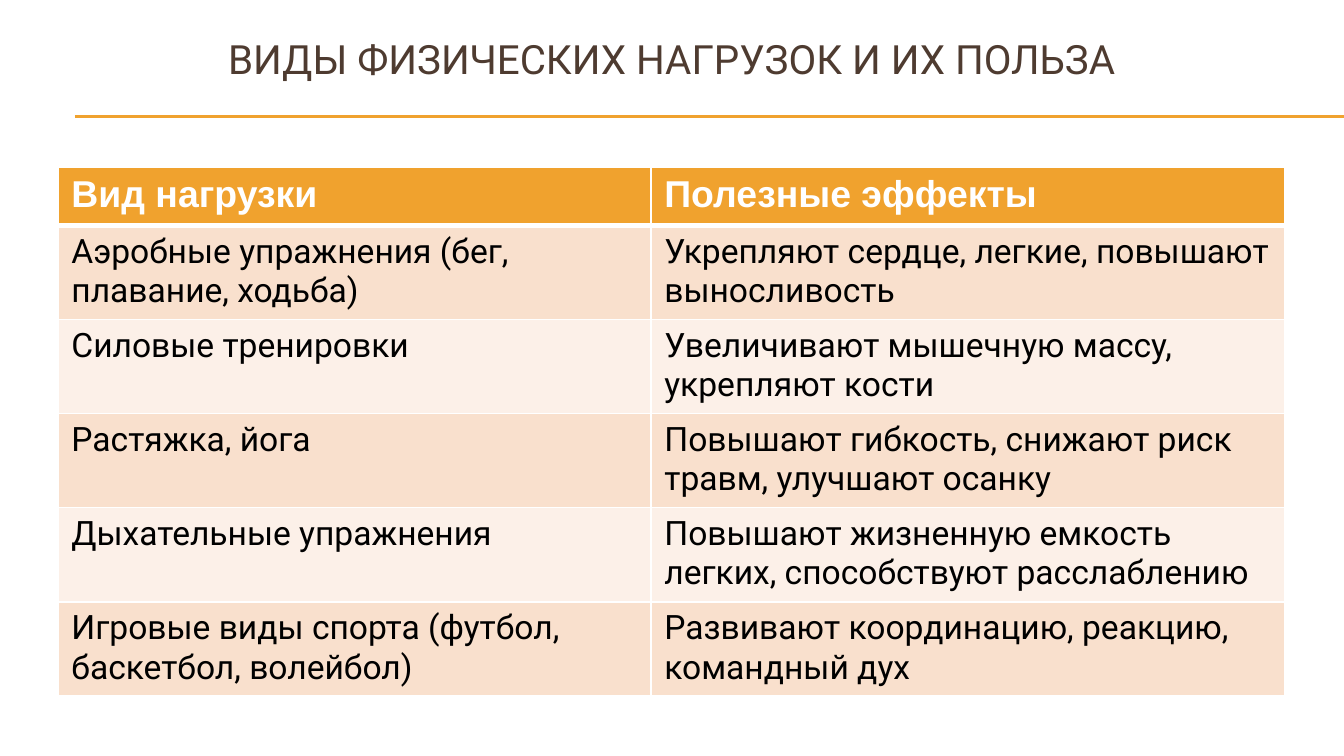
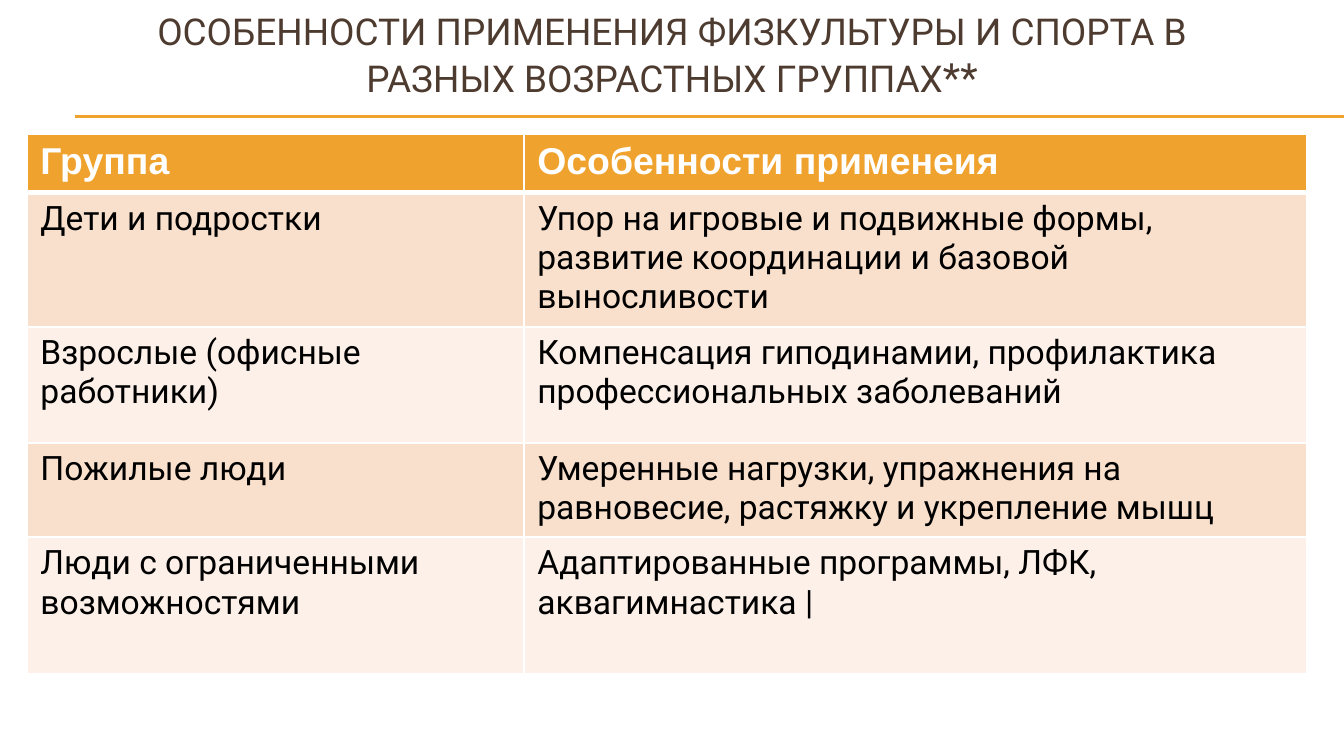
from lxml import etree
from pptx import Presentation
from pptx.dml.color import RGBColor
from pptx.enum.shapes import MSO_CONNECTOR
from pptx.enum.text import MSO_ANCHOR, PP_ALIGN
from pptx.oxml import parse_xml
from pptx.oxml.ns import nsdecls, qn
from pptx.util import Pt

# Shared style
PX = 914400 / 134.4
W, H = 1344, 756
COLORS = {
    "accent": "F0A22E",
    "title": "4E3B30",
    "text": "000000",
    "white": "FFFFFF",
    "band_dark": "F9E0CD",
    "band_light": "FCF0E8",
}
BODY_FONT, HEAD_FONT = "Roboto", "Arial"
RULE_LEFT, RULE_YS = 75, (116, 117)
TITLE_LEFT, TITLE_WIDTH = 67, 1210

# Slide content: title runs are (text, size); lengths are px
SLIDES = [
    {
        "title": [("ВИДЫ ФИЗИЧЕСКИХ НАГРУЗОК И ИХ ПОЛЬЗА", 21.6)],
        "title_top": 31, "title_height": 54,
        "left": 58, "top": 167,
        "cols": [593, 634],
        "heights": [55] + [92] * 5,
        "rows": [
            ("Вид нагрузки", "Полезные эффекты"),
            ("Аэробные упражнения (бег, плавание, ходьба)",
             "Укрепляют сердце, легкие, повышают выносливость"),
            ("Силовые тренировки", "Увеличивают мышечную массу, укрепляют кости"),
            ("Растяжка, йога", "Повышают гибкость, снижают риск травм, улучшают осанку"),
            ("Дыхательные упражнения",
             "Повышают жизненную емкость легких, способствуют расслаблению"),
            ("Игровые виды спорта (футбол, баскетбол, волейбол)",
             "Развивают координацию, реакцию, командный дух"),
        ],
    },
    {
        "title": [("ОСОБЕННОСТИ ПРИМЕНЕНИЯ ФИЗКУЛЬТУРЫ И СПОРТА В "
                   "РАЗНЫХ ВОЗРАСТНЫХ ГРУППАХ", 19.8), ("**", 21.6)],
        "title_top": 12, "title_height": 85,
        "left": 27, "top": 134,
        "cols": [497, 783],
        "heights": [55, 132, 116, 92, 137],
        "rows": [
            ("Группа", "Особенности применеия"),
            ("Дети и подростки",
             "Упор на игровые и подвижные формы, развитие координации "
             "и базовой выносливости"),
            ("Взрослые (офисные работники)",
             "Компенсация гиподинамии, профилактика профессиональных заболеваний"),
            ("Пожилые люди",
             "Умеренные нагрузки, упражнения на равновесие, растяжку и укрепление мышц"),
            ("Люди с ограниченными возможностями",
             "Адаптированные программы, ЛФК, аквагимнастика |"),
        ],
    },
]


def px(n):
    return round(n * PX)


def style_run(r, font, size, color, bold=False):
    r.font.name = font
    r.font.size = Pt(size)
    r.font.bold = bold
    r.font.color.rgb = RGBColor.from_string(COLORS[color])


prs = Presentation()
prs.slide_width, prs.slide_height = px(W), px(H)

for data in SLIDES:
    s = prs.slides.add_slide(prs.slide_layouts[6])

    # Double rule under the title
    for y in RULE_YS:
        rule = s.shapes.add_connector(MSO_CONNECTOR.STRAIGHT, px(RULE_LEFT), px(y), px(W), px(y))
        rule.line.color.rgb = RGBColor.from_string(COLORS["accent"])
        rule.line.width = Pt(0.75)
        etree.SubElement(rule._element.spPr, qn("a:effectLst"))

    # Title
    box = s.shapes.add_textbox(px(TITLE_LEFT), px(data["title_top"]),
                               px(TITLE_WIDTH), px(data["title_height"]))
    tf = box.text_frame
    tf.word_wrap = True
    tf.vertical_anchor = MSO_ANCHOR.MIDDLE
    tf.margin_top = tf.margin_bottom = 0
    p = tf.paragraphs[0]
    p.alignment = PP_ALIGN.CENTER
    for text, size in data["title"]:
        r = p.add_run()
        r.text = text
        style_run(r, BODY_FONT, size, "title")

    # Table
    rows, cols, heights = data["rows"], data["cols"], data["heights"]
    table = s.shapes.add_table(len(rows), len(cols), px(data["left"]), px(data["top"]),
                               px(sum(cols)), px(sum(heights))).table
    for col, width in zip(table.columns, cols):
        col.width = px(width)
    for row, height in zip(table.rows, heights):
        row.height = px(height)

    for i, texts in enumerate(rows):
        fill = "accent" if i == 0 else "band_dark" if i % 2 else "band_light"
        for j, text in enumerate(texts):
            cell = table.cell(i, j)
            cell.text_frame.text = text
            r = cell.text_frame.paragraphs[0].runs[0]
            if i == 0:
                style_run(r, HEAD_FONT, 20, "white", bold=True)
            else:
                style_run(r, BODY_FONT, 18, "text")

            # White borders, thicker below the header
            tcPr = cell._tc.get_or_add_tcPr()
            for side in "LRTB":
                thick = (i, side) in ((0, "B"), (1, "T"))
                tcPr.append(parse_xml(
                    f'<a:ln{side} {nsdecls("a")} w="{Pt(3 if thick else 1)}"><a:solidFill>'
                    f'<a:srgbClr val="{COLORS["white"]}"/></a:solidFill></a:ln{side}>'))
            cell.fill.solid()
            cell.fill.fore_color.rgb = RGBColor.from_string(COLORS[fill])

prs.save("out.pptx")
